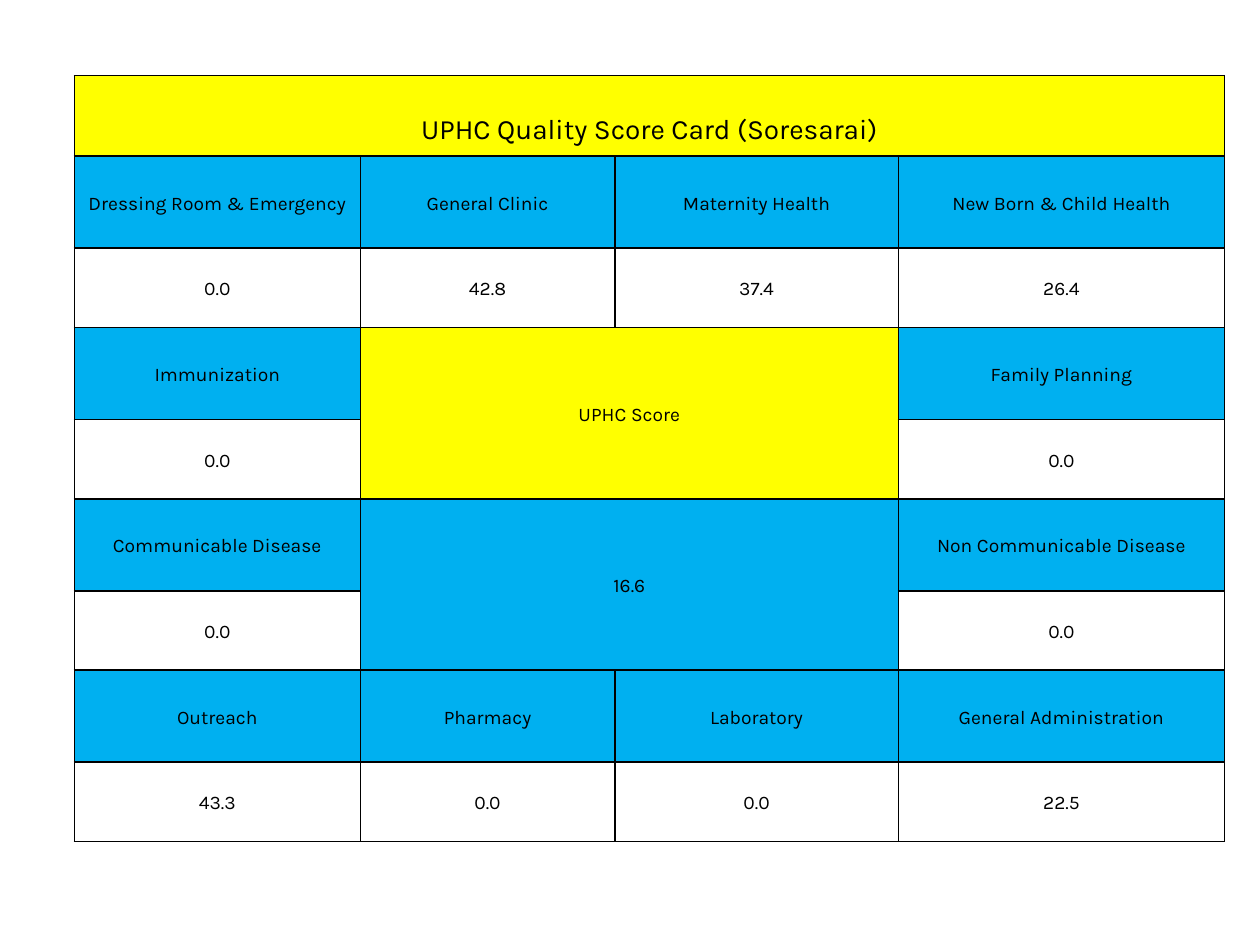
import pptx
import pptx.util
import pptx.dml.color
import pptx.enum.text
import pptx.oxml
import pptx.oxml.ns

COLORS = {"heading": "FFFF00", "area": "00B0F0", "ink": "000000"}
FONT = "Karla"
COLUMNS = [2.27, 2.02, 2.25, 2.59]
TITLE_ROW, AREA_ROW, SCORE_ROW = 0.64, 0.73, 0.63
ROWS = [TITLE_ROW] + [AREA_ROW, SCORE_ROW] * 4

# Each band is a row of areas above a row of their scores, by column
BANDS = [
    {0: ("Dressing Room & Emergency", "0.0"), 1: ("General Clinic", "42.8"),
     2: ("Maternity Health", "37.4"), 3: ("New Born & Child Health", "26.4")},
    {0: ("Immunization", "0.0"), 3: ("Family Planning", "0.0")},
    {0: ("Communicable Disease", "0.0"), 3: ("Non Communicable Disease", "0.0")},
    {0: ("Outreach", "43.3"), 1: ("Pharmacy", "0.0"),
     2: ("Laboratory", "0.0"), 3: ("General Administration", "22.5")},
]


def draw_borders(cell):
    properties = cell._tc.get_or_add_tcPr()
    for position, side in enumerate(("lnL", "lnR", "lnT", "lnB")):
        properties.insert(position, pptx.oxml.parse_xml(
            f'<a:{side} {pptx.oxml.ns.nsdecls("a")} w="12700"><a:solidFill>'
            f'<a:srgbClr val="{COLORS["ink"]}"/></a:solidFill></a:{side}>'))


def write_cell(cell, text, fill=None, size=11, top=0):
    if fill:
        cell.fill.solid()
        cell.fill.fore_color.rgb = pptx.dml.color.RGBColor.from_string(COLORS[fill])
    cell.vertical_anchor = pptx.enum.text.MSO_ANCHOR.MIDDLE
    cell.margin_left = cell.margin_right = pptx.util.Inches(0.07)
    cell.margin_top, cell.margin_bottom = pptx.util.Inches(top), 0
    line = cell.text_frame.paragraphs[0]
    line.text = text
    line.alignment = pptx.enum.text.PP_ALIGN.CENTER
    line.line_spacing = 1.15
    font = line.runs[0].font
    font.name, font.size = FONT, pptx.util.Pt(size)
    font.color.rgb = pptx.dml.color.RGBColor.from_string(COLORS["ink"])


def add_score_card(slide, left, top):
    card = slide.shapes.add_table(
        len(ROWS), len(COLUMNS), pptx.util.Inches(left), pptx.util.Inches(top),
        pptx.util.Inches(sum(COLUMNS)), pptx.util.Inches(sum(ROWS))).table
    card.first_row = card.horz_banding = False
    for column, width in zip(card.columns, COLUMNS):
        column.width = pptx.util.Inches(width)
    for row, height in zip(card.rows, ROWS):
        row.height = pptx.util.Inches(height)
    for cell in card.iter_cells():
        cell.fill.background()
        draw_borders(cell)

    # Title across the top
    card.cell(0, 0).merge(card.cell(0, len(COLUMNS) - 1))
    write_cell(card.cell(0, 0), "UPHC Quality Score Card (Soresarai)",
               "heading", size=16, top=0.19)

    # Areas with their scores
    for band, areas in enumerate(BANDS):
        area_row = 1 + 2 * band
        for column, (area, score) in areas.items():
            write_cell(card.cell(area_row, column), area, "area")
            write_cell(card.cell(area_row + 1, column), score)

    # Overall score in the centre
    for row, text, fill in ((3, "UPHC Score", "heading"), (5, "16.6", "area")):
        card.cell(row, 1).merge(card.cell(row + 1, 2))
        write_cell(card.cell(row, 1), text, fill)


def main():
    deck = pptx.Presentation()
    deck.slide_width, deck.slide_height = pptx.util.Inches(10), pptx.util.Inches(7.5)
    slide = deck.slides.add_slide(deck.slide_layouts[6])
    add_score_card(slide, left=0.59, top=0.6)
    deck.save("out.pptx")


if __name__ == "__main__":
    main()
